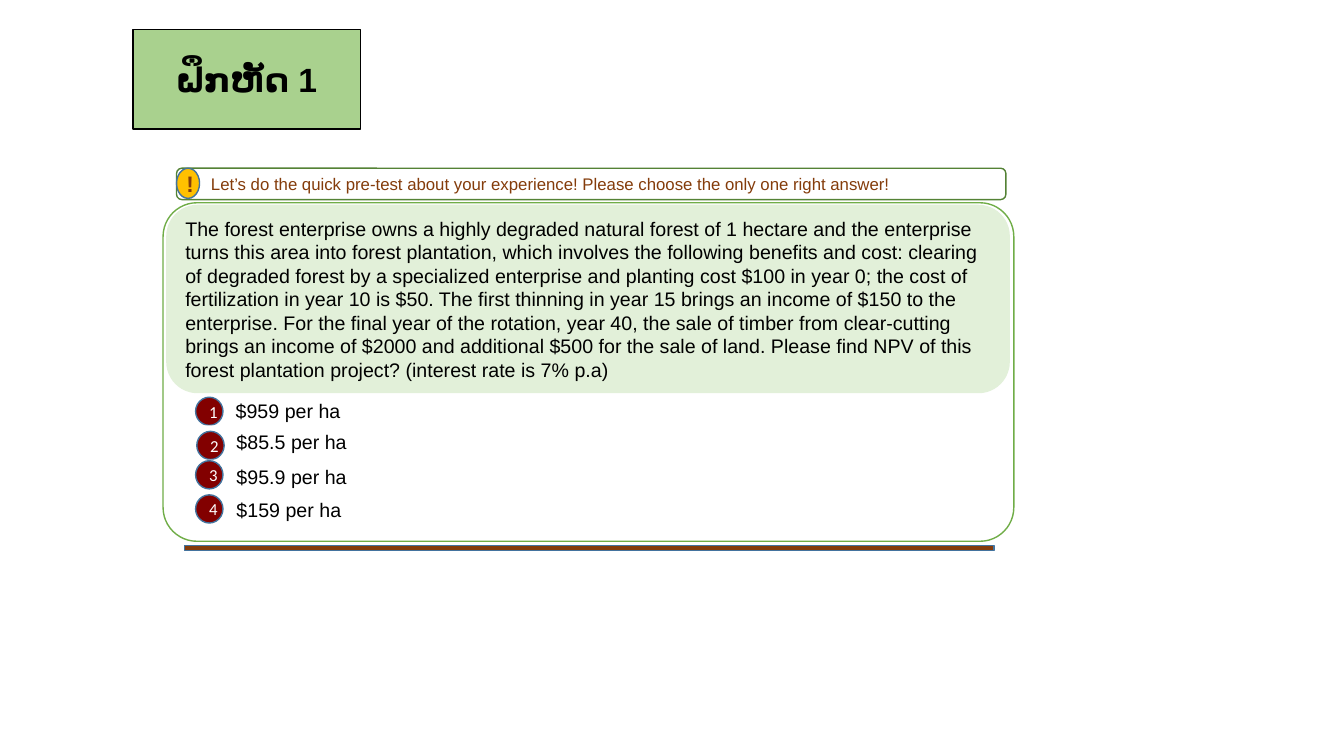
from lxml import etree
from pptx import Presentation
from pptx.dml.color import RGBColor as RGB
from pptx.enum.shapes import MSO_SHAPE as SHAPE
from pptx.enum.text import MSO_ANCHOR as ANCHOR, MSO_AUTO_SIZE as AUTO, PP_ALIGN as ALIGN
from pptx.oxml import parse_xml
from pptx.oxml.ns import nsdecls, qn
from pptx.util import Cm, Pt

COLORS = {
    "white": "FFFFFF", "black": "000000", "scroll": "A9D18E", "outline": "2F5597",
    "green": "70AD47", "dark green": "548235", "pale green": "E2F0D9",
    "brown": "843C0B", "blue": "43739E", "red": "820000", "gold": "FFC000",
}


class ExerciseSlide:
    """Style and drawing methods for the current slide."""

    font = "Arial"
    line_width = Pt(1)

    def __init__(self, prs):
        self.slide = prs.slides.add_slide(prs.slide_layouts[5])

    def paint(self, sp, fill, line):
        if fill:
            sp.fill.solid()
            sp.fill.fore_color.rgb = RGB.from_string(COLORS[fill])
        else:
            sp.fill.background()
        if line:
            sp.line.color.rgb = RGB.from_string(COLORS[line])
            sp.line.width = self.line_width
        else:
            sp.line.fill.background()

    def shape(self, kind, box, fill=None, line=None, radius=None):
        sp = self.slide.shapes.add_shape(kind, *map(Cm, box))
        sp.shadow.inherit = False
        self.paint(sp, fill, line)
        if radius is not None:
            sp.adjustments[0] = radius
        return sp

    def text(self, sp, words, size, color="black", align=ALIGN.LEFT,
             anchor=ANCHOR.MIDDLE, bold=False, font=None, indent=0):
        tf = sp.text_frame
        tf.word_wrap = True
        tf.auto_size = AUTO.NONE
        tf.vertical_anchor = anchor
        tf.margin_left = Cm(0.25 + indent)
        p = tf.paragraphs[0]
        p.alignment = align
        r = p.add_run()
        r.text = words
        r.font.name = font or self.font
        r.font.size = Pt(size)
        r.font.bold = bold
        r.font.color.rgb = RGB.from_string(COLORS[color])
        return r

    def title(self, words, box):
        sp = self.slide.shapes.title
        sp.left, sp.top, sp.width, sp.height = map(Cm, box)
        sp._element.spPr.insert(1, parse_xml(
            f'<a:prstGeom {nsdecls("a")} prst="horizontalScroll"><a:avLst/></a:prstGeom>'))
        self.paint(sp, "scroll", "black")
        r = self.text(sp, words, 24, align=ALIGN.CENTER, bold=True)
        # Thin outline and complex-script font for the Lao letters
        rpr = r.font._element
        rpr.insert(0, parse_xml(
            f'<a:ln {nsdecls("a")} w="{Pt(0.75)}"><a:solidFill>'
            f'<a:srgbClr val="{COLORS["outline"]}"/></a:solidFill></a:ln>'))
        etree.SubElement(rpr, qn("a:cs")).set("typeface", self.font)

    def badge(self, words, box, fill, **style):
        sp = self.shape(SHAPE.OVAL, box, fill, "blue")
        self.text(sp, words, align=ALIGN.CENTER, **style)

    def answer(self, number, words, box, badge_at):
        sp = self.shape(SHAPE.RECTANGLE, box, "white")
        self.text(sp, words, 14, anchor=ANCHOR.TOP, indent=1.09)
        self.badge(str(number), (*badge_at, 0.69, 0.71), "red",
                   size=12, color="white", font="Calibri")


SCENARIO = (
    "The forest enterprise owns a highly degraded natural forest of 1 hectare and the "
    "enterprise turns this area into forest plantation, which involves the following "
    "benefits and cost: clearing of degraded forest by a specialized enterprise and "
    "planting cost $100 in year 0; the cost of fertilization in year 10 is $50. The first "
    "thinning in year 15 brings an income of $150 to the enterprise. For the final year of "
    "the rotation, year 40, the sale of timber from clear-cutting brings an income of $2000 "
    "and additional $500 for the sale of land. Please find NPV of this forest plantation "
    "project? (interest rate is 7% p.a)"
)
# Wording, left, top and width of each answer, then left and top of its number
ANSWERS = [
    ("$959 per ha", 4.6, 9.93, 20.5, (4.93, 10.01)),
    ("$85.5 per ha", 4.62, 10.72, 20.12, (4.96, 10.87)),
    ("$95.9 per ha", 4.62, 11.58, 20.47, (4.93, 11.61)),
    ("$159 per ha", 4.62, 12.42, 20.47, (4.93, 12.47)),
]


def main():
    prs = Presentation()
    prs.slide_width, prs.slide_height = Cm(33.87), Cm(19.05)
    s = ExerciseSlide(prs)

    # Title scroll
    s.title("ຝຶກຫັດ 1", (3.35, 0.74, 5.74, 2.51))

    # Question panel and closing bar
    s.shape(SHAPE.ROUNDED_RECTANGLE, (4.11, 5.11, 21.44, 8.53), "white", "green", 0.1)
    scenario = s.shape(SHAPE.ROUNDED_RECTANGLE, (4.19, 5.16, 21.26, 4.75), "pale green")
    s.text(scenario, SCENARIO, 14)
    s.shape(SHAPE.RECTANGLE, (4.65, 13.74, 20.4, 0.13), "brown", "blue")

    # Answers
    for number, (words, left, top, width, badge_at) in enumerate(ANSWERS, 1):
        s.answer(number, words, (left, top, width, 0.86), badge_at)

    # Instruction strip
    strip = s.shape(SHAPE.ROUNDED_RECTANGLE, (4.45, 4.24, 20.9, 0.79), line="dark green")
    s.text(strip, "Let’s do the quick pre-test about your experience! "
           "Please choose the only one right answer!", 12, "brown", indent=0.58)
    s.badge("!", (4.45, 4.24, 0.58, 0.76), "gold", size=16, color="brown", bold=True)

    prs.save("out.pptx")


if __name__ == "__main__":
    main()
